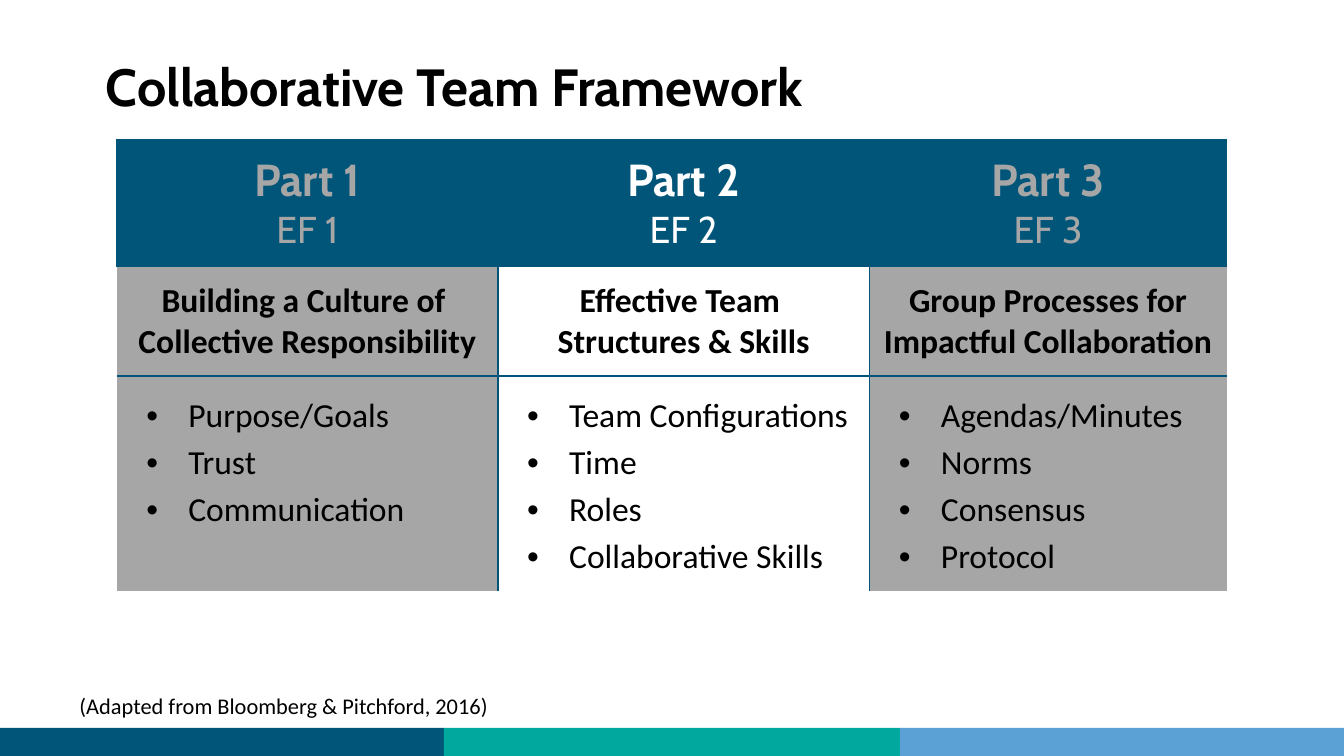
import pptx
import pptx.dml.color
import pptx.enum.shapes
import pptx.enum.text
import pptx.oxml
import pptx.oxml.ns
import pptx.util

Pt = pptx.util.Pt
RGBColor = pptx.dml.color.RGBColor
PP_ALIGN = pptx.enum.text.PP_ALIGN
MSO_ANCHOR = pptx.enum.text.MSO_ANCHOR

NAVY = RGBColor(0x00, 0x55, 0x79)
TEAL = RGBColor(0x00, 0xA8, 0x9E)
SKY = RGBColor(0x5C, 0xA1, 0xD6)
GRAY = RGBColor(0xA6, 0xA6, 0xA6)
WHITE = RGBColor(0xFF, 0xFF, 0xFF)
BLACK = RGBColor(0, 0, 0)

HEADING_FONT, BODY_FONT = "Cabin", "Calibri"
INSET = 7.2
NO_GRID_STYLE = "{2D5ABB26-0587-4C30-8999-92F81FD0307C}"

COLUMN_WIDTHS = [204, 199.2, 191.2]
ROW_HEIGHTS = [66.3, 58.3, 113.8]
# Part, framework label, topic lines, bullets, whether it is the current part
PARTS = [
    ("Part 1", "EF 1",
     ["Building a Culture of ", "Collective Responsibility"],
     ["Purpose/Goals", "Trust", "Communication"], False),
    ("Part 2", "EF 2",
     ["Effective Team ", "Structures & Skills"],
     ["Team Configurations", "Time", "Roles", "Collaborative Skills"], True),
    ("Part 3", "EF 3",
     ["Group Processes for Impactful Collaboration "],
     ["Agendas/Minutes", "Norms", "Consensus", "Protocol"], False),
]


def add_run(paragraph, text, font, size, color, bold=False):
    run = paragraph.add_run()
    run.text = text
    run.font.name = font
    run.font.size = Pt(size)
    run.font.bold = bold
    run.font.color.rgb = color


def next_paragraph(text_frame, index):
    return text_frame.add_paragraph() if index else text_frame.paragraphs[0]


def set_bullet(paragraph):
    properties = paragraph._p.get_or_add_pPr()
    properties.set("marL", str(Pt(31)))
    properties.set("indent", str(-Pt(22.5)))
    namespace = pptx.oxml.ns.nsdecls("a")
    for xml in (
        f'<a:buClr {namespace}><a:srgbClr val="{BLACK}"/></a:buClr>',
        f'<a:buFont {namespace} typeface="Arial"/>',
        f'<a:buChar {namespace} char="•"/>',
    ):
        properties.append(pptx.oxml.parse_xml(xml))


def style_cell(cell, fill, edges):
    """Set insets, fill and 1 pt borders; edges is drawn from "LRTB"."""
    cell.margin_left = cell.margin_right = Pt(INSET)
    cell.margin_top = cell.margin_bottom = Pt(INSET)
    if fill is None:
        cell.fill.background()
    else:
        cell.fill.solid()
        cell.fill.fore_color.rgb = fill
    properties = cell._tc.get_or_add_tcPr()
    for position, edge in enumerate(side for side in "LRTB" if side in edges):
        properties.insert(position, pptx.oxml.parse_xml(
            f'<a:ln{edge} {pptx.oxml.ns.nsdecls("a")} w="{Pt(1)}"><a:solidFill>'
            f'<a:srgbClr val="{NAVY}"/></a:solidFill></a:ln{edge}>'))


def fill_column(cells, part, label, topic, bullets, current, sides):
    header, middle, bottom = cells
    body_fill = None if current else GRAY
    style_cell(header, NAVY, "LRT")
    style_cell(middle, body_fill, sides + "B")
    style_cell(bottom, body_fill, sides + "T")

    header_color = WHITE if current else GRAY
    for index, (text, size, bold) in enumerate([(part, 24, True), (label, 20, False)]):
        paragraph = next_paragraph(header.text_frame, index)
        paragraph.alignment = PP_ALIGN.CENTER
        add_run(paragraph, text, HEADING_FONT, size, header_color, bold)
    for index, text in enumerate(topic):
        paragraph = next_paragraph(middle.text_frame, index)
        paragraph.alignment = PP_ALIGN.CENTER
        add_run(paragraph, text, BODY_FONT, 18, BLACK, bold=True)
    for index, text in enumerate(bullets):
        paragraph = next_paragraph(bottom.text_frame, index)
        paragraph.line_spacing = 1.15
        set_bullet(paragraph)
        add_run(paragraph, text, BODY_FONT, 18, BLACK)


def add_framework_table(slide, left, top):
    shape = slide.shapes.add_table(
        len(ROW_HEIGHTS), len(PARTS), Pt(left), Pt(top),
        Pt(sum(COLUMN_WIDTHS)), Pt(sum(ROW_HEIGHTS)))
    table = shape.table
    table.first_row = table.horz_banding = False
    table._tbl.tblPr.find(pptx.oxml.ns.qn("a:tableStyleId")).text = NO_GRID_STYLE
    for row, height in zip(table.rows, ROW_HEIGHTS):
        row.height = Pt(height)
    for index, width in enumerate(COLUMN_WIDTHS):
        table.columns[index].width = Pt(width)
        cells = [table.cell(row, index) for row in range(len(ROW_HEIGHTS))]
        sides = ("L" if index else "") + ("R" if index < len(PARTS) - 1 else "")
        fill_column(cells, *PARTS[index], sides)


def add_footer_bands(slide, left, top, height):
    for width, color in [(237.8, NAVY), (244.4, TEAL), (237.8, SKY)]:
        band = slide.shapes.add_shape(
            pptx.enum.shapes.MSO_SHAPE.RECTANGLE,
            Pt(left), Pt(top), Pt(width), Pt(height))
        band.shadow.inherit = False
        band.fill.solid()
        band.fill.fore_color.rgb = color
        band.line.fill.background()
        left += width


def set_title(slide, left, top, width, height):
    title = slide.shapes.title
    title.left, title.top = Pt(left), Pt(top)
    title.width, title.height = Pt(width), Pt(height)
    frame = title.text_frame
    frame.margin_left = frame.margin_right = Pt(INSET)
    frame.margin_top = frame.margin_bottom = Pt(INSET)
    frame.vertical_anchor = MSO_ANCHOR.TOP
    frame.auto_size = pptx.enum.text.MSO_AUTO_SIZE.NONE
    paragraph = frame.paragraphs[0]
    paragraph.alignment = PP_ALIGN.LEFT
    add_run(paragraph, "Collaborative Team Framework", HEADING_FONT, 28, BLACK, bold=True)


def add_source_note(slide, left, top, width, height):
    note = slide.shapes.add_textbox(Pt(left), Pt(top), Pt(width), Pt(height))
    note.text_frame.word_wrap = True
    add_run(note.text_frame.paragraphs[0],
            "(Adapted from Bloomberg & Pitchford, 2016)", BODY_FONT, 12, BLACK)


def main():
    presentation = pptx.Presentation()
    presentation.slide_width, presentation.slide_height = Pt(720), Pt(405)
    slide = presentation.slides.add_slide(presentation.slide_layouts[5])
    add_footer_bands(slide, 0, 390, 15)
    set_title(slide, 49.5, 21.6, 620.6, 64.8)
    add_framework_table(slide, 62.7, 75)
    add_source_note(slide, 35.5, 367.5, 617, 21.6)
    presentation.save("out.pptx")


if __name__ == "__main__":
    main()
